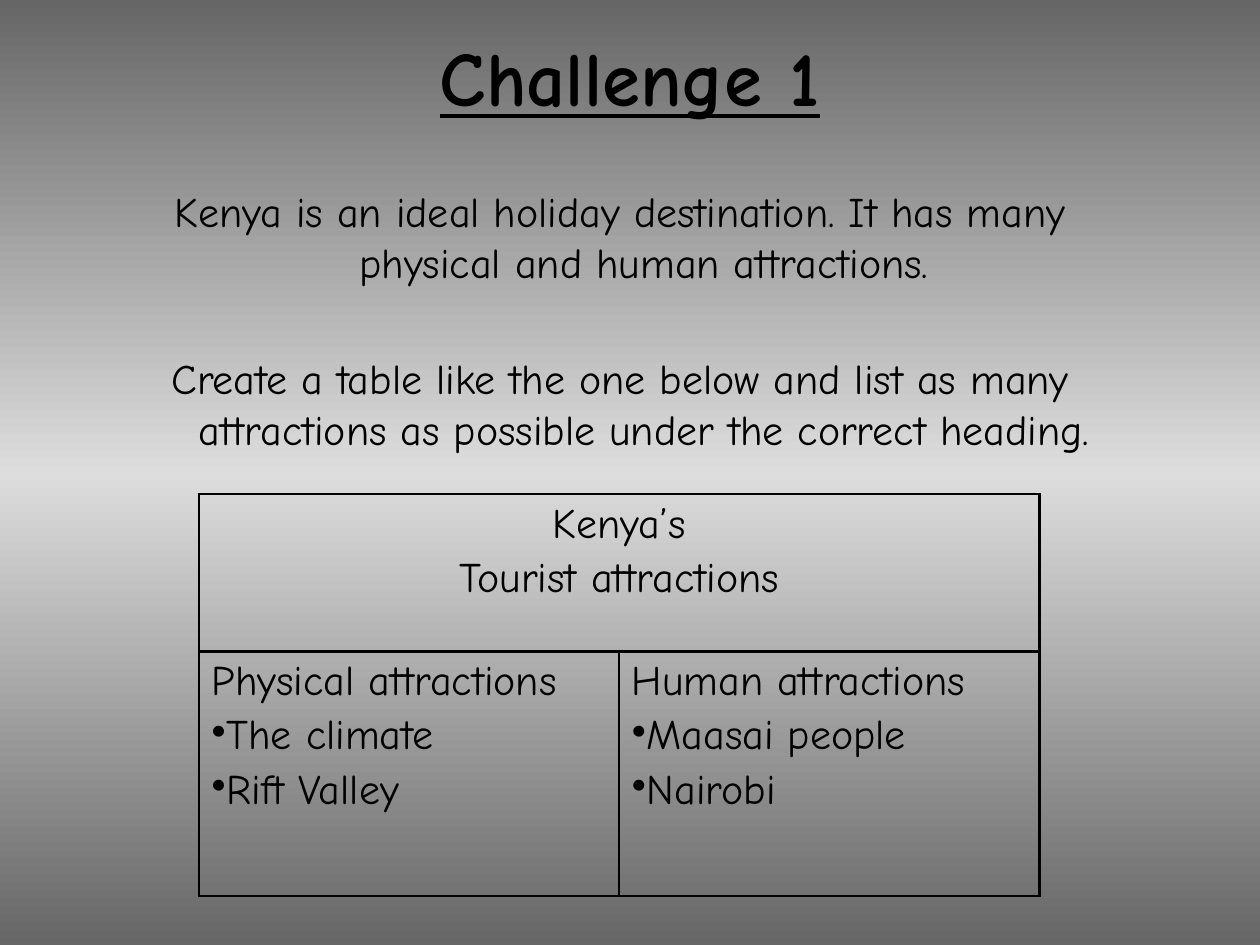
import copy

import lxml.etree
import pptx
import pptx.dml.color
import pptx.enum.text
import pptx.oxml.ns
import pptx.util

W, H = 10, 7.5
FONT = "Comic Neue"
CENTER = pptx.enum.text.PP_ALIGN.CENTER
LEFT = pptx.enum.text.PP_ALIGN.LEFT
qn = pptx.oxml.ns.qn


def color(hex_string):
    """Return the colour of a hex string."""
    return pptx.dml.color.RGBColor.from_string(hex_string)


def place(shape, x, y, w, h):
    """Move and size a shape by shares of the slide."""
    shape.left, shape.top = pptx.util.Inches(x * W), pptx.util.Inches(y * H)
    shape.width, shape.height = pptx.util.Inches(w * W), pptx.util.Inches(h * H)


def write(p, text, size=24, bold=False, underline=False, align=CENTER,
          before=0, bullet=None, hanging=0):
    """Fill a paragraph with formatted text."""
    p.alignment = align
    p.space_before = pptx.util.Pt(before)
    pPr = p._p.get_or_add_pPr()
    pPr.set("marL", str(pptx.util.Inches(hanging)))
    pPr.set("indent", str(-pptx.util.Inches(hanging)))
    if bullet:
        lxml.etree.SubElement(pPr, qn("a:buChar")).set("char", bullet)
    else:
        lxml.etree.SubElement(pPr, qn("a:buNone"))
    r = p.add_run()
    r.text = text
    r.font.name, r.font.size = FONT, pptx.util.Pt(size)
    r.font.bold, r.font.underline = bold, underline
    r.font.color.rgb = color("000000")


def write_lines(tf, lines):
    """Write one paragraph for each pair of text and format."""
    for i, (text, fmt) in enumerate(lines):
        write(tf.add_paragraph() if i else tf.paragraphs[0], text, **fmt)


def paint_background(s, edge, middle):
    """Give the slide a vertical gradient that is symmetric about its middle."""
    fill = s.background.fill
    fill.gradient()
    fill.gradient_angle = 90
    stops = s.element.find(".//" + qn("a:gsLst"))
    stops.insert(1, copy.deepcopy(stops[0]))
    for stop, position, shade in zip(fill.gradient_stops, (0, 0.5, 1), (edge, middle, edge)):
        stop.position = position
        stop.color.rgb = color(shade)


def add_text(shape, box, anchor, lines):
    """Place a placeholder and write its lines."""
    place(shape, *box)
    tf = shape.text_frame
    tf.word_wrap = True
    tf.auto_size = pptx.enum.text.MSO_AUTO_SIZE.NONE
    tf.vertical_anchor = anchor
    write_lines(tf, lines)


def outline(cell, line_color, width):
    """Draw all four borders of a table cell and clear its fill."""
    tcPr = cell._tc.get_or_add_tcPr()
    for side in ("a:lnL", "a:lnR", "a:lnT", "a:lnB"):
        ln = lxml.etree.SubElement(tcPr, qn(side), w=str(pptx.util.Pt(width)))
        solid = lxml.etree.SubElement(ln, qn("a:solidFill"))
        lxml.etree.SubElement(solid, qn("a:srgbClr"), val=line_color)
    cell.fill.background()


def add_attractions(s, heading, columns):
    """Add a table with one heading row above a list in each column."""
    x, y, w = pptx.util.Inches(1.58), pptx.util.Inches(3.92), pptx.util.Inches(6.67)
    heights = [pptx.util.Inches(1.25), pptx.util.Inches(1.94)]
    table = s.shapes.add_table(2, len(columns), x, y, w, sum(heights)).table
    table.first_row = table.horz_banding = False
    for row, height in zip(table.rows, heights):
        row.height = height
    for cell in table.iter_cells():
        outline(cell, "000000", 1.5)
    table.cell(0, 0).merge(table.cell(0, len(columns) - 1))
    write_lines(table.cell(0, 0).text_frame, [(t, {"before": 3.4}) for t in heading])
    for i, (title, *items) in enumerate(columns):
        lines = [(title, {"align": LEFT})]
        lines += [(t, {"align": LEFT, "before": 3.4, "bullet": "•"}) for t in items]
        write_lines(table.cell(1, i).text_frame, lines)


def main():
    """Build the slide and save it."""
    prs = pptx.Presentation()
    prs.slide_width, prs.slide_height = pptx.util.Inches(W), pptx.util.Inches(H)
    s = prs.slides.add_slide(prs.slide_layouts[1])
    paint_background(s, "666666", "DDDDDD")
    anchors = pptx.enum.text.MSO_ANCHOR
    add_text(s.shapes.title, (0.075, 0, 0.85, 0.16), anchors.MIDDLE, [
        ("Challenge 1", {"size": 44, "bold": True, "underline": True}),
    ])
    add_text(s.placeholders[1], (0.067, 0.19, 0.85, 0.71), anchors.TOP, [
        ("Kenya is an ideal holiday destination. It has many physical and human attractions.",
         {"hanging": 0.38}),
        ("Create a table like the one below and list as many attractions as possible "
         "under the correct heading.", {"hanging": 0.38, "before": 37.7}),
    ])
    add_attractions(s, ["Kenya’s", "Tourist attractions"], [
        ["Physical attractions", "The climate", "Rift Valley"],
        ["Human attractions", "Maasai people", "Nairobi"],
    ])
    prs.save("out.pptx")


if __name__ == "__main__":
    main()
